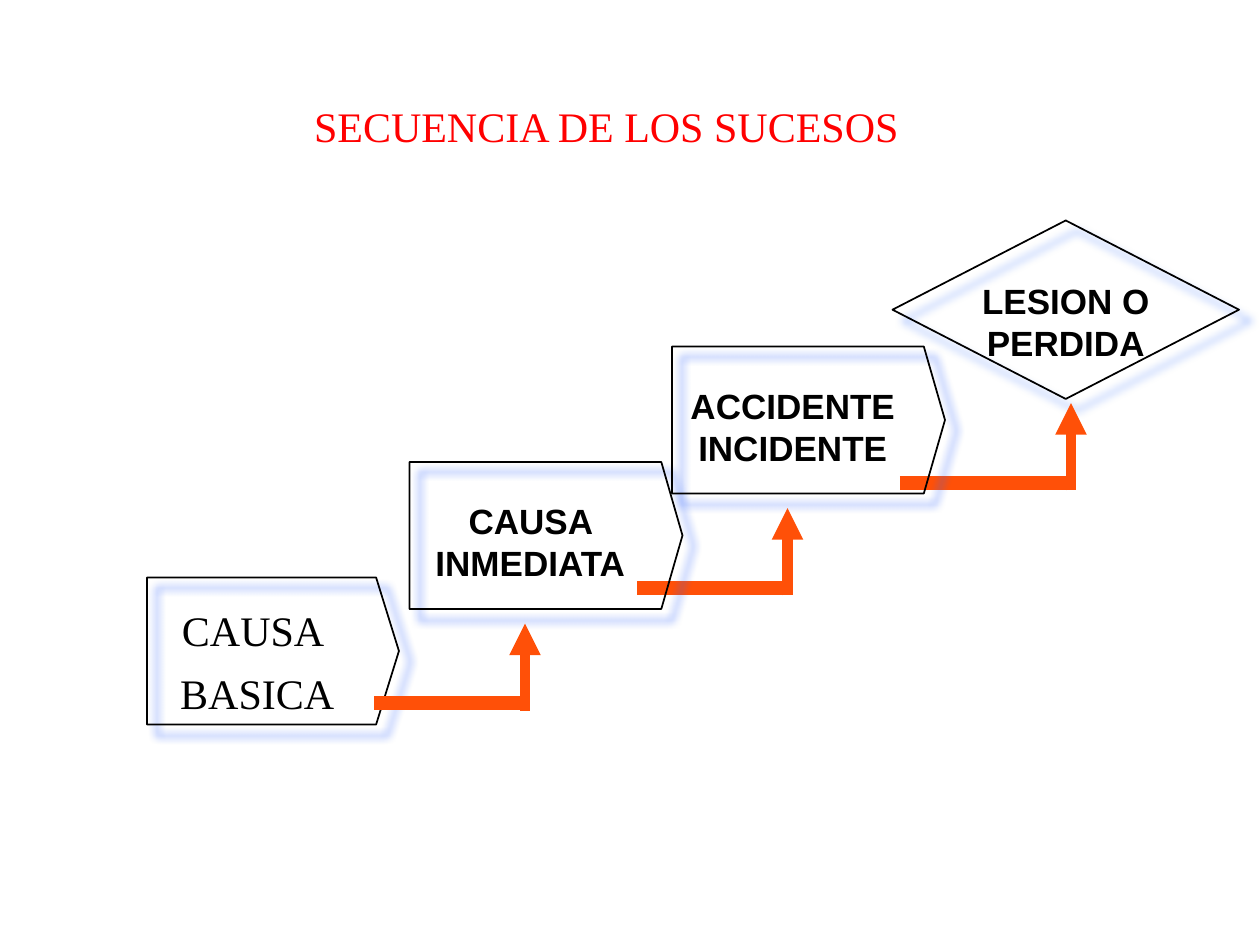
import pptx
import pptx.util
import pptx.dml.color
import pptx.enum.shapes
import pptx.enum.text
import pptx.oxml
import pptx.oxml.ns

SHAPE = pptx.enum.shapes.MSO_SHAPE
ALIGN = pptx.enum.text.PP_ALIGN
ANCHOR = pptx.enum.text.MSO_ANCHOR

THEME = {
    "black": "000000", "red": "FF0000", "orange": "FF5008",
    "shadow": "3365FB", "pale_shadow": "618FFD",
    "serif": "Times New Roman", "sans": "Arial",
    "large": 24, "small": 20,
    "outline": 1, "bar": 8, "arrow": 6,
}

COLS, ROWS = 120, 90
TITLE = "SECUENCIA DE LOS SUCESOS"
TITLE_BOX = (24.8, 6, 65.9, 12)
SERIF = {"font": THEME["serif"], "size": THEME["large"]}
SANS = {"font": THEME["sans"], "size": THEME["small"], "bold": True}

STAGES = [
    {"text": ["CAUSA ", "BASICA"], "style": SERIF, "label": (8, 57),
     "kind": SHAPE.PENTAGON, "box": (14, 55, 24, 14), "adj": 0.155},
    {"text": ["CAUSA INMEDIATA"], "style": SANS, "label": (34, 47),
     "kind": SHAPE.PENTAGON, "box": (39, 44, 26, 14), "adj": 0.144},
    {"text": ["ACCIDENTE INCIDENTE"], "style": SANS, "label": (59, 36),
     "kind": SHAPE.PENTAGON, "box": (64, 33, 26, 14), "adj": 0.144},
    {"text": ["LESION O PERDIDA"], "style": SANS, "label": (85, 26),
     "kind": SHAPE.DIAMOND, "box": (85, 21, 33, 17),
     "shadow": THEME["pale_shadow"]},
]
LABEL_SIZE = (33, 7)
ELBOWS = [(35.65, 50, 67), (60.7, 75, 56), (85.7, 102, 46)]
OVERLAP, FOOT, RISE = 0.35, 0.7, 7.6

prs = pptx.Presentation()
prs.slide_width = pptx.util.Inches(10)
prs.slide_height = pptx.util.Inches(7.5)
s = prs.slides.add_slide(prs.slide_layouts[6])


def grid(*values):
    units = (prs.slide_width / COLS, prs.slide_height / ROWS)
    return [round(v * units[i % 2]) for i, v in enumerate(values)]


def rgb(color):
    return pptx.dml.color.RGBColor.from_string(color)


def xml(tag, attrs="", inner=""):
    ns = pptx.oxml.ns.nsdecls("a")
    return pptx.oxml.parse_xml(f"<a:{tag} {ns} {attrs}>{inner}</a:{tag}>")


def add_text(lines, box, font, size, color=THEME["black"], bold=False,
             anchor=ANCHOR.TOP, gap=7):
    tf = s.shapes.add_textbox(*grid(*box)).text_frame
    tf.word_wrap = True
    tf.vertical_anchor = anchor
    for i, line in enumerate(lines):
        p = tf.paragraphs[0] if i == 0 else tf.add_paragraph()
        p.alignment = ALIGN.CENTER
        p.space_before = pptx.util.Pt(gap if i else 0)
        r = p.add_run()
        r.text = line
        r.font.name = font
        r.font.size = pptx.util.Pt(size)
        r.font.bold = bold
        r.font.color.rgb = rgb(color)


def add_stage(kind, box, adj=None, shadow=THEME["shadow"]):
    sp = s.shapes.add_shape(kind, *grid(*box))
    if adj is not None:
        sp.adjustments[0] = adj
    sp.fill.background()
    sp.line.color.rgb = rgb(THEME["black"])
    sp.line.width = pptx.util.Pt(THEME["outline"])
    sp.shadow.inherit = False
    effects = sp._element.spPr.find(pptx.oxml.ns.qn("a:effectLst"))
    effects.append(xml(
        "outerShdw",
        f'blurRad="{pptx.util.Pt(5)}" dist="{pptx.util.Pt(8.5)}" '
        'dir="2700000" algn="ctr" rotWithShape="0"',
        f'<a:srgbClr val="{shadow}"/>'))


def add_line(points, width, arrow=False):
    c = s.shapes.add_connector(
        pptx.enum.shapes.MSO_CONNECTOR.STRAIGHT, *grid(*points))
    c.line.color.rgb = rgb(THEME["orange"])
    c.line.width = pptx.util.Pt(width)
    if arrow:
        c.line._get_or_add_ln().append(xml("tailEnd", 'type="triangle"'))
    c._element.spPr.append(xml("effectLst"))


def add_bar(start, corner, row):
    add_line((start, row, corner + OVERLAP, row), THEME["bar"])


for elbow in ELBOWS[1:]:
    add_bar(*elbow)
for stage in STAGES:
    add_stage(**{k: stage[k] for k in ("kind", "box", "adj", "shadow")
                 if k in stage})
for stage in STAGES:
    add_text(stage["text"], stage["label"] + LABEL_SIZE, **stage["style"])
add_bar(*ELBOWS[0])
for _, corner, row in ELBOWS:
    add_line((corner, row + FOOT, corner, row - RISE), THEME["arrow"], arrow=True)
add_text([TITLE], TITLE_BOX, color=THEME["red"], anchor=ANCHOR.MIDDLE, **SERIF)

prs.save("out.pptx")
